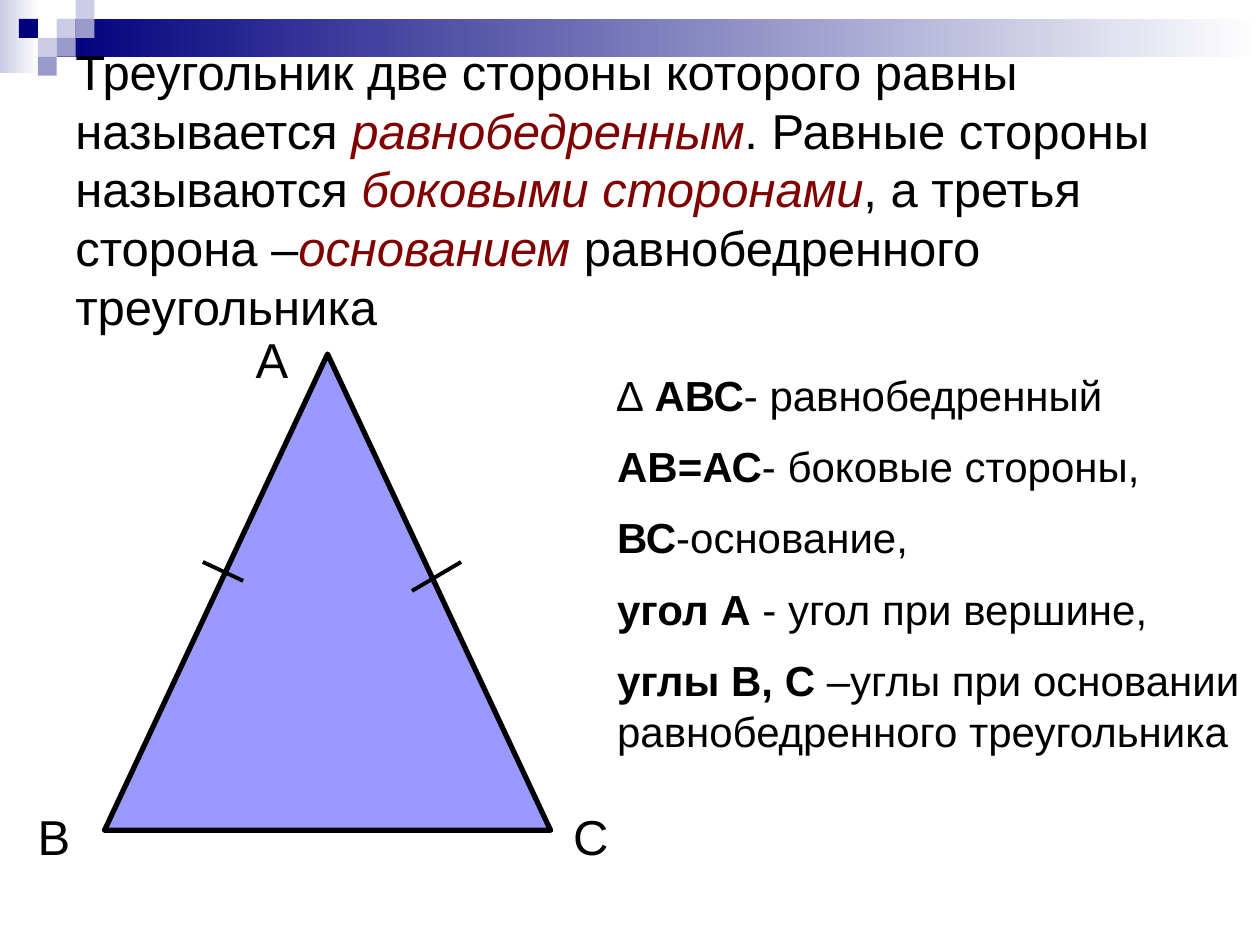
from dataclasses import dataclass

from pptx import Presentation
from pptx import util as u
from pptx.dml.color import RGBColor
from pptx.enum import shapes, text
from pptx.oxml.ns import qn


@dataclass(frozen=True)
class Theme:
    font: str = "Arial"
    ink: str = "000000"
    accent: str = "800000"
    navy: str = "00007D"
    lavender: str = "CCCCE6"
    violet: str = "9999CC"
    triangle: str = "9999FF"
    white: str = "FFFFFF"
    large: int = 28
    body: int = 24


THEME = Theme()


def color(value):
    return RGBColor.from_string(value)


def add_filled(slide, box, fill, kind=shapes.MSO_SHAPE.RECTANGLE, line=None, width=0):
    """Add a preset shape; a pair of colours makes a left-to-right gradient."""
    shape = slide.shapes.add_shape(kind, *map(u.Inches, box))
    shape.shadow.inherit = False
    if isinstance(fill, tuple):
        shape.fill.gradient()
        shape.fill.gradient_angle = 0
        for stop, position, value in zip(shape.fill.gradient_stops, (0, 1), fill):
            stop.position = position
            stop.color.rgb = color(value)
    else:
        shape.fill.solid()
        shape.fill.fore_color.rgb = color(fill)
    if line:
        shape.line.color.rgb = color(line)
        shape.line.width = u.Pt(width)
    else:
        shape.line.fill.background()
    return shape


def add_text(slide, box, paragraphs, size, anchor=text.MSO_ANCHOR.TOP, before=0):
    """Add paragraphs of (words, font settings) runs."""
    shape = slide.shapes.add_textbox(*map(u.Inches, box))
    frame = shape.text_frame
    frame.word_wrap = True
    frame.vertical_anchor = anchor
    for index, runs in enumerate(paragraphs):
        paragraph = frame.paragraphs[0] if index == 0 else frame.add_paragraph()
        paragraph.space_before = u.Pt(before)
        for words, settings in runs:
            run = paragraph.add_run()
            run.text = words
            run.font.name = THEME.font
            run.font.size = u.Pt(size)
            run.font.bold = settings.get("bold", False)
            run.font.italic = settings.get("italic", False)
            run.font.color.rgb = color(settings.get("color", THEME.ink))
    return shape


def add_tick(slide, start, end):
    points = map(u.Inches, (*start, *end))
    tick = slide.shapes.add_connector(shapes.MSO_CONNECTOR.STRAIGHT, *points)
    tick.line.color.rgb = color(THEME.ink)
    tick.line.width = u.Pt(2.25)
    properties = tick._element.spPr
    properties.append(properties.makeelement(qn("a:effectLst"), {}))


def add_header(slide):
    add_filled(slide, (0, 0, 0.31, 0.58), (THEME.lavender, THEME.white))
    add_filled(slide, (0.45, 0.15, 9.55, 0.3), (THEME.navy, THEME.white))
    # Mosaic squares as column, row and colour
    side = 0.15
    squares = [
        (3, 1, THEME.lavender), (4, 0, THEME.lavender), (4, 1, THEME.violet),
        (2, 2, THEME.lavender), (1, 1, THEME.navy), (3, 2, THEME.violet),
        (2, 3, THEME.violet),
    ]
    for column, row, fill in squares:
        add_filled(slide, (column * side, row * side, side, side), fill)


def add_definition(slide):
    term = {"italic": True, "color": THEME.accent}
    runs = [
        ("Треугольник две стороны которого равны называется ", {}),
        ("равнобедренным", term),
        (". Равные стороны называются ", {}),
        ("боковыми сторонами", term),
        (", а третья сторона –", {}),
        ("основанием", term),
        (" равнобедренного треугольника", {}),
    ]
    add_text(slide, (0.5, 0.5, 9, 1.99), [runs], THEME.large, text.MSO_ANCHOR.MIDDLE)


def add_triangle(slide):
    add_filled(slide, (0.83, 2.81, 3.54, 3.78), THEME.triangle,
               shapes.MSO_SHAPE.ISOSCELES_TRIANGLE, THEME.ink, 3)
    for name, left, top in (("А", 1.93, 2.57), ("В", 0.2, 6.35), ("С", 4.45, 6.35)):
        add_text(slide, (left, top, 0.63, 0.57), [[(name, {})]], THEME.large)
    # Marks of the equal sides
    add_tick(slide, (1.61, 4.46), (1.93, 4.61))
    add_tick(slide, (3.66, 4.46), (3.27, 4.69))


def add_notation(slide):
    bold = {"bold": True}
    lines = [
        [("∆ ", {}), ("АВС", bold), ("- равнобедренный", {})],
        [("АВ=АС", bold), ("- боковые стороны,", {})],
        [("ВС", bold), ("-основание,", {})],
        [("угол А", bold), (" - угол при вершине,", {})],
        [("углы В, С", bold),
         (" –углы при основании равнобедренного треугольника", {})],
    ]
    add_text(slide, (4.8, 2.88, 5.2, 3.89), lines, THEME.body, before=THEME.body / 2)


def main():
    presentation = Presentation()
    presentation.slide_width = u.Inches(10)
    presentation.slide_height = u.Inches(7.5)
    slide = presentation.slides.add_slide(presentation.slide_layouts[6])
    add_header(slide)
    add_definition(slide)
    add_triangle(slide)
    add_notation(slide)
    presentation.save("out.pptx")


if __name__ == "__main__":
    main()
